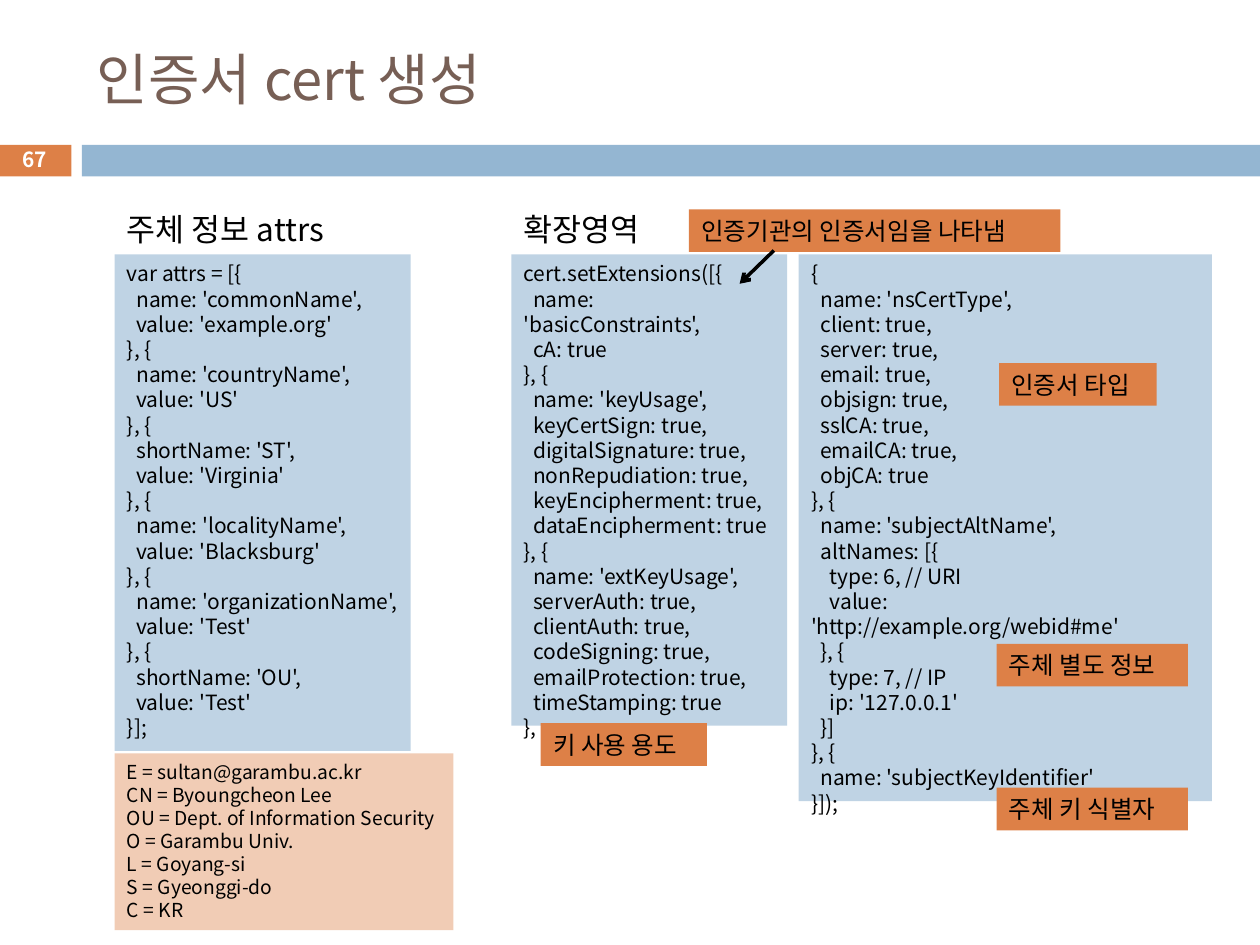
import dataclasses
import typing

import lxml.etree
import pptx
import pptx.dml.color
import pptx.enum.shapes
import pptx.enum.text
import pptx.oxml.ns
import pptx.shapes.base
import pptx.slide
import pptx.text.text
import pptx.util

Cm = pptx.util.Cm
RGBColor = pptx.dml.color.RGBColor
Anchor = pptx.enum.text.MSO_ANCHOR
Align = pptx.enum.text.PP_ALIGN

FONT = "Noto Sans CJK KR"
BLACK = RGBColor(0x00, 0x00, 0x00)
WHITE = RGBColor(0xFF, 0xFF, 0xFF)
BROWN = RGBColor(0x77, 0x5F, 0x55)
ORANGE = RGBColor(0xDD, 0x80, 0x47)
PEACH = RGBColor(0xF1, 0xCC, 0xB5)
BLUE = RGBColor(0x94, 0xB6, 0xD2)
PALE_BLUE = RGBColor(0xBF, 0xD3, 0xE4)

LINE_HEIGHT = 1.2
LEFT_COLUMN = 2.31
MIDDLE_COLUMN = 10.31
HEADING_TOP = 4.11
CODE_TOP = 5.13
LABEL_HEIGHT = 0.86

ATTRIBUTES = """var attrs = [{
  name: 'commonName',
  value: 'example.org'
}, {
  name: 'countryName',
  value: 'US'
}, {
  shortName: 'ST',
  value: 'Virginia'
}, {
  name: 'localityName',
  value: 'Blacksburg'
}, {
  name: 'organizationName',
  value: 'Test'
}, {
  shortName: 'OU',
  value: 'Test'
}];"""

EXTENSIONS = """cert.setExtensions([{
  name: 'basicConstraints',
  cA: true
}, {
  name: 'keyUsage',
  keyCertSign: true,
  digitalSignature: true,
  nonRepudiation: true,
  keyEncipherment: true,
  dataEncipherment: true
}, {
  name: 'extKeyUsage',
  serverAuth: true,
  clientAuth: true,
  codeSigning: true,
  emailProtection: true,
  timeStamping: true
},"""

MORE_EXTENSIONS = """{
  name: 'nsCertType',
  client: true,
  server: true,
  email: true,
  objsign: true,
  sslCA: true,
  emailCA: true,
  objCA: true
}, {
  name: 'subjectAltName',
  altNames: [{
    type: 6, // URI
    value: 'http://example.org/webid#me'
  }, {
    type: 7, // IP
    ip: '127.0.0.1'
  }]
}, {
  name: 'subjectKeyIdentifier'
}]);"""

SUBJECT = """E = sultan@garambu.ac.kr
CN = Byoungcheon Lee
OU = Dept. of Information Security
O = Garambu Univ.
L = Goyang-si
S = Gyeonggi-do
C = KR"""


@dataclasses.dataclass(frozen=True)
class Box:
    left: float
    top: float
    width: float
    height: float
    fill: typing.Optional[RGBColor] = None
    text: str = ""
    size: float = 12
    color: RGBColor = BLACK
    bold: bool = False
    align: Align = Align.LEFT
    anchor: Anchor = Anchor.TOP
    right_margin: float = 0


def label(left: float, top: float, width: float, text: str) -> Box:
    return Box(left, top, width, LABEL_HEIGHT, ORANGE, text, 14)


BOXES = [
    Box(-0.03, 2.92, 1.47, 0.64, ORANGE),
    Box(1.65, 2.92, 23.75, 0.64, BLUE),
    Box(-0.03, 2.87, 1.47, 0.69, None, "67", 11.9, WHITE, True,
        Align.CENTER, Anchor.MIDDLE, 0.25),
    Box(LEFT_COLUMN, CODE_TOP, 5.97, 10.01, PALE_BLUE, ATTRIBUTES),
    Box(LEFT_COLUMN, HEADING_TOP, 4.83, 1.02, None, "주체 정보 attrs", 18),
    Box(MIDDLE_COLUMN, CODE_TOP, 5.56, 9.5, PALE_BLUE, EXTENSIONS, right_margin=0.25),
    Box(16.1, CODE_TOP, 8.33, 11.02, PALE_BLUE, MORE_EXTENSIONS, right_margin=0.25),
    Box(MIDDLE_COLUMN, HEADING_TOP, 3.3, 1.02, None, "확장영역", 18),
    Box(LEFT_COLUMN, 15.19, 6.83, 3.56, PEACH, SUBJECT, 11),
    label(10.9, 14.58, 3.35, "키 사용 용도"),
    label(20.14, 7.32, 3.18, "인증서 타입"),
    label(20.09, 12.98, 3.86, "주체 별도 정보"),
    label(13.89, 4.22, 7.49, "인증기관의 인증서임을 나타냄"),
    label(20.09, 15.88, 3.86, "주체 키 식별자"),
]


def set_attributes(target: typing.Any, values: typing.Dict[str, typing.Any]) -> None:
    for name, value in values.items():
        setattr(target, name, value)


def write_text(frame: pptx.text.text.TextFrame, box: Box) -> None:
    set_attributes(frame, {
        "text": box.text,
        "word_wrap": True,
        "auto_size": pptx.enum.text.MSO_AUTO_SIZE.NONE,
        "vertical_anchor": box.anchor,
        "margin_left": Cm(0.25),
        "margin_right": Cm(box.right_margin),
        "margin_top": Cm(0.13),
        "margin_bottom": Cm(0.13),
    })
    for paragraph in frame.paragraphs:
        set_attributes(paragraph, {
            "alignment": box.align,
            "line_spacing": pptx.util.Pt(box.size * LINE_HEIGHT),
        })
        for run in paragraph.runs:
            set_attributes(run.font, {
                "name": FONT,
                "size": pptx.util.Pt(box.size),
                "bold": box.bold,
            })
            run.font.color.rgb = box.color
            east_asian = lxml.etree.SubElement(
                run.font._element, pptx.oxml.ns.qn("a:ea"))
            east_asian.set("typeface", FONT)


def place(shape: pptx.shapes.base.BaseShape, box: Box) -> None:
    set_attributes(shape, {
        name: Cm(getattr(box, name)) for name in ("left", "top", "width", "height")
    })


def draw_box(slide: pptx.slide.Slide, box: Box) -> None:
    if box.fill is None:
        shape = slide.shapes.add_textbox(0, 0, 0, 0)
    else:
        shape = slide.shapes.add_shape(
            pptx.enum.shapes.MSO_SHAPE.RECTANGLE, 0, 0, 0, 0)
        shape.shadow.inherit = False
        shape.fill.solid()
        shape.fill.fore_color.rgb = box.fill
        shape.line.fill.background()
    place(shape, box)
    if box.text:
        write_text(shape.text_frame, box)


def draw_arrow(slide: pptx.slide.Slide) -> None:
    arrow = slide.shapes.add_connector(
        pptx.enum.shapes.MSO_CONNECTOR.STRAIGHT,
        Cm(15.6), Cm(5.05), Cm(14.91), Cm(5.72))
    arrow.line.color.rgb = BLACK
    arrow.line.width = pptx.util.Pt(2)
    qn = pptx.oxml.ns.qn
    lxml.etree.SubElement(arrow.line._get_or_add_ln(), qn("a:tailEnd")).set("type", "arrow")
    lxml.etree.SubElement(arrow._element.spPr, qn("a:effectLst"))


def main() -> None:
    presentation = pptx.Presentation()
    set_attributes(presentation, {"slide_width": Cm(25.4), "slide_height": Cm(19.05)})
    slide = presentation.slides.add_slide(presentation.slide_layouts[5])
    title = Box(1.7, 0.64, 22.66, 1.88, None, "인증서 cert 생성", 32, BROWN,
                anchor=Anchor.MIDDLE)
    place(slide.shapes.title, title)
    write_text(slide.shapes.title.text_frame, title)
    for box in BOXES:
        draw_box(slide, box)
    draw_arrow(slide)
    presentation.save("out.pptx")


if __name__ == "__main__":
    main()
